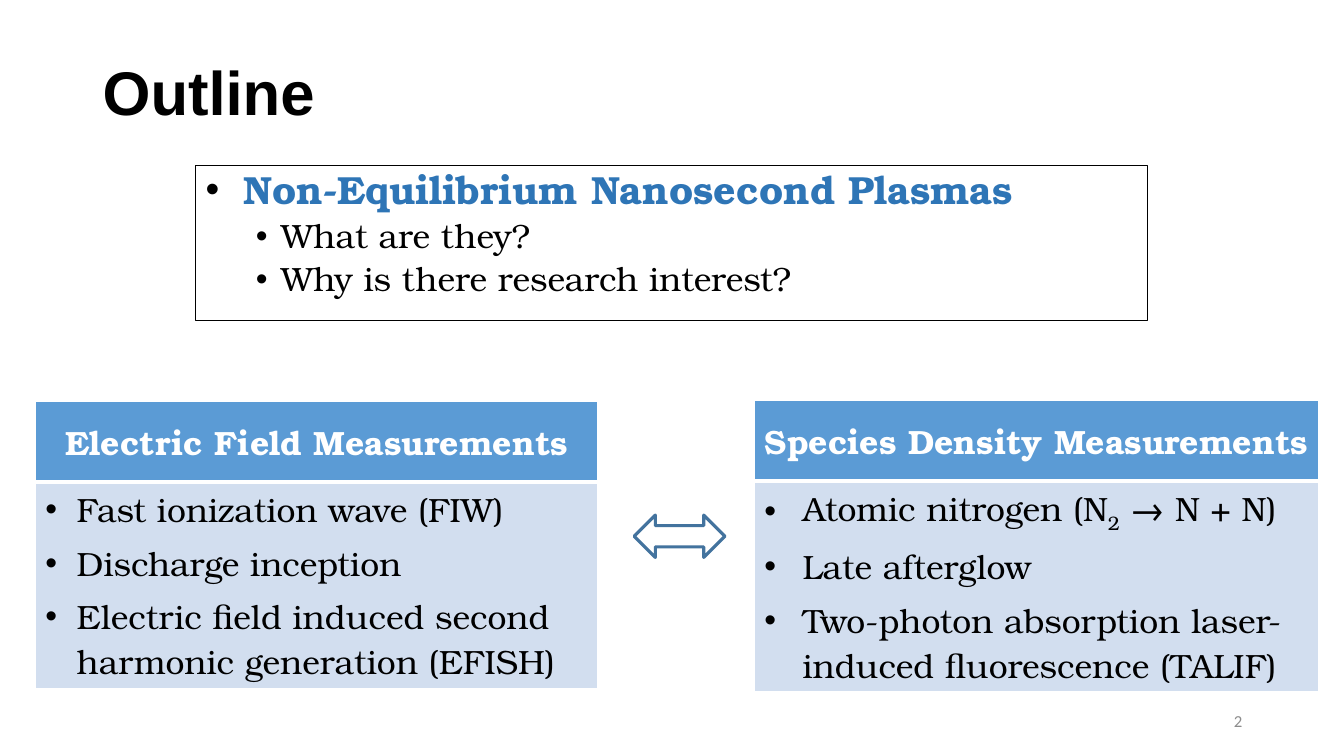
from dataclasses import dataclass

from lxml import etree
from pptx import Presentation
from pptx import util as u
from pptx.dml.color import RGBColor
from pptx.enum import shapes, text
from pptx.oxml.ns import qn


@dataclass(frozen=True)
class Theme:
    black: str = "000000"
    white: str = "FFFFFF"
    heading: str = "2E75B6"
    header_fill: str = "5B9BD5"
    body_fill: str = "D2DEEF"
    arrow_line: str = "43739E"
    page_number: str = "8C8C8C"
    title_font: str = "Arial"
    body_font: str = "TeX Gyre Bonum"
    number_font: str = "Calibri"
    title_size: int = 44
    heading_size: int = 28
    body_size: int = 24
    number_size: int = 12


THEME = Theme()


def color(value):
    return RGBColor.from_string(value)


def add_span(para, words, size=THEME.body_size, font=THEME.body_font,
             shade=THEME.black, bold=False, baseline=0):
    span = para.add_run()
    span.text = words
    span.font.size = u.Pt(size)
    span.font.name = font
    span.font.bold = bold
    span.font.color.rgb = color(shade)
    if baseline:
        span.font._element.set("baseline", str(baseline * 1000))


def set_bullet(para, margin, hanging):
    props = para._p.get_or_add_pPr()
    props.set("marL", str(u.Inches(margin)))
    props.set("indent", str(-u.Inches(hanging)))
    shade = etree.SubElement(props, qn("a:buClr"))
    etree.SubElement(shade, qn("a:srgbClr"), val=THEME.black)
    etree.SubElement(props, qn("a:buFont"), typeface="Arial")
    etree.SubElement(props, qn("a:buChar"), char="•")


def next_para(frame, index):
    return frame.paragraphs[0] if index == 0 else frame.add_paragraph()


def add_box(page, left, top, width, height, anchor):
    box = page.shapes.add_textbox(*map(u.Inches, (left, top, width, height)))
    box.text_frame.word_wrap = True
    box.text_frame.vertical_anchor = anchor
    return box


def add_title(page, left, top, width, height):
    box = add_box(page, left, top, width, height, text.MSO_ANCHOR.MIDDLE)
    para = box.text_frame.paragraphs[0]
    para.line_spacing = 0.9
    add_span(para, "Outline", THEME.title_size, THEME.title_font, bold=True)


def add_topic(page, left, top, width, height, heading, questions):
    box = add_box(page, left, top, width, height, text.MSO_ANCHOR.TOP)
    box.line.color.rgb = color(THEME.black)
    box.line.width = u.Pt(0.75)
    for index, words in enumerate([heading, *questions]):
        para = next_para(box.text_frame, index)
        para.line_spacing = 0.9
        if index == 0:
            para.space_before = u.Pt(10)
            set_bullet(para, 0.38, 0.38)
            add_span(para, words, THEME.heading_size,
                     shade=THEME.heading, bold=True)
        else:
            para.level = 1
            para.space_before = u.Pt(5)
            set_bullet(para, 0.75, 0.25)
            add_span(para, words)


def style_cell(cell, fill, top, bottom):
    props = cell._tc.get_or_add_tcPr()
    for side, width in (("L", 1), ("R", 1), ("T", top), ("B", bottom)):
        line = etree.SubElement(props, qn(f"a:ln{side}"), w=str(u.Pt(width)))
        solid = etree.SubElement(line, qn("a:solidFill"))
        etree.SubElement(solid, qn("a:srgbClr"), val=THEME.white)
    cell.fill.solid()
    cell.fill.fore_color.rgb = color(fill)


def add_measurements(page, left, top, width, height, heading, items, indent):
    header_height = 0.8
    table = page.shapes.add_table(
        2, 1, *map(u.Inches, (left, top, width, height))).table
    table.rows[0].height = u.Inches(header_height)
    table.rows[1].height = u.Inches(height - header_height)
    header, body = table.cell(0, 0), table.cell(1, 0)
    style_cell(header, THEME.header_fill, 1, 3)
    style_cell(body, THEME.body_fill, 3, 1)
    header.vertical_anchor = text.MSO_ANCHOR.MIDDLE
    para = header.text_frame.paragraphs[0]
    para.alignment = text.PP_ALIGN.CENTER
    add_span(para, heading, shade=THEME.white, bold=True)
    for index, spans in enumerate(items):
        para = next_para(body.text_frame, index)
        para.space_before = para.space_after = u.Pt(3)
        set_bullet(para, indent, indent)
        for words, baseline in spans:
            add_span(para, words, baseline=baseline)


def add_double_arrow(page, left, top, width, height):
    arrow = page.shapes.add_shape(
        shapes.MSO_SHAPE.LEFT_RIGHT_ARROW,
        *map(u.Inches, (left, top, width, height)))
    arrow.shadow.inherit = False
    arrow.fill.solid()
    arrow.fill.fore_color.rgb = color(THEME.white)
    arrow.line.color.rgb = color(THEME.arrow_line)
    arrow.line.width = u.Pt(2.25)


def add_page_number(page, left, top, width, height):
    box = add_box(page, left, top, width, height, text.MSO_ANCHOR.MIDDLE)
    para = box.text_frame.paragraphs[0]
    para.alignment = text.PP_ALIGN.RIGHT
    add_span(para, "2", THEME.number_size, THEME.number_font,
             THEME.page_number)


def main():
    deck = Presentation()
    deck.slide_width, deck.slide_height = u.Inches(13.33), u.Inches(7.5)
    page = deck.slides.add_slide(deck.slide_layouts[6])
    add_title(page, 0.92, 0.22, 11.5, 1.45)
    add_topic(page, 1.94, 1.64, 9.44, 1.54,
              "Non-Equilibrium Nanosecond Plasmas",
              ["What are they?", "Why is there research interest?"])
    add_page_number(page, 9.42, 6.95, 3, 0.4)
    add_measurements(
        page, 0.35, 3.98, 5.58, 2.85, "Electric Field Measurements",
        [[("Fast ionization wave (FIW)", 0)],
         [("Discharge inception", 0)],
         [("Electric field induced second harmonic generation (EFISH)", 0)]],
        0.31)
    add_measurements(
        page, 7.48, 3.97, 5.6, 2.89, "Species Density Measurements",
        [[("Atomic nitrogen (N", 0), ("2", -25), (" → N + N)", 0)],
         [("Late afterglow", 0)],
         [("Two-photon absorption laser-induced fluorescence (TALIF)", 0)]],
        0.38)
    add_double_arrow(page, 6.29, 5.11, 0.9, 0.42)
    deck.save("out.pptx")


if __name__ == "__main__":
    main()
